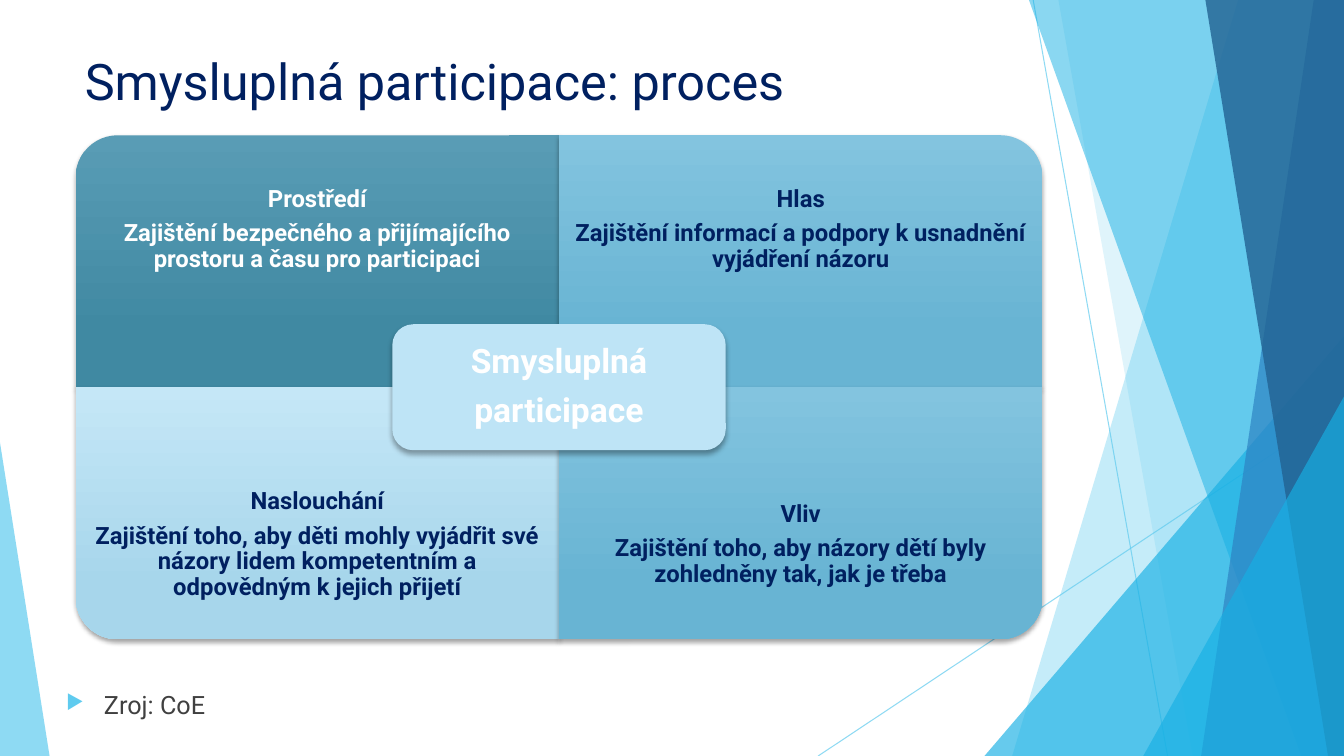
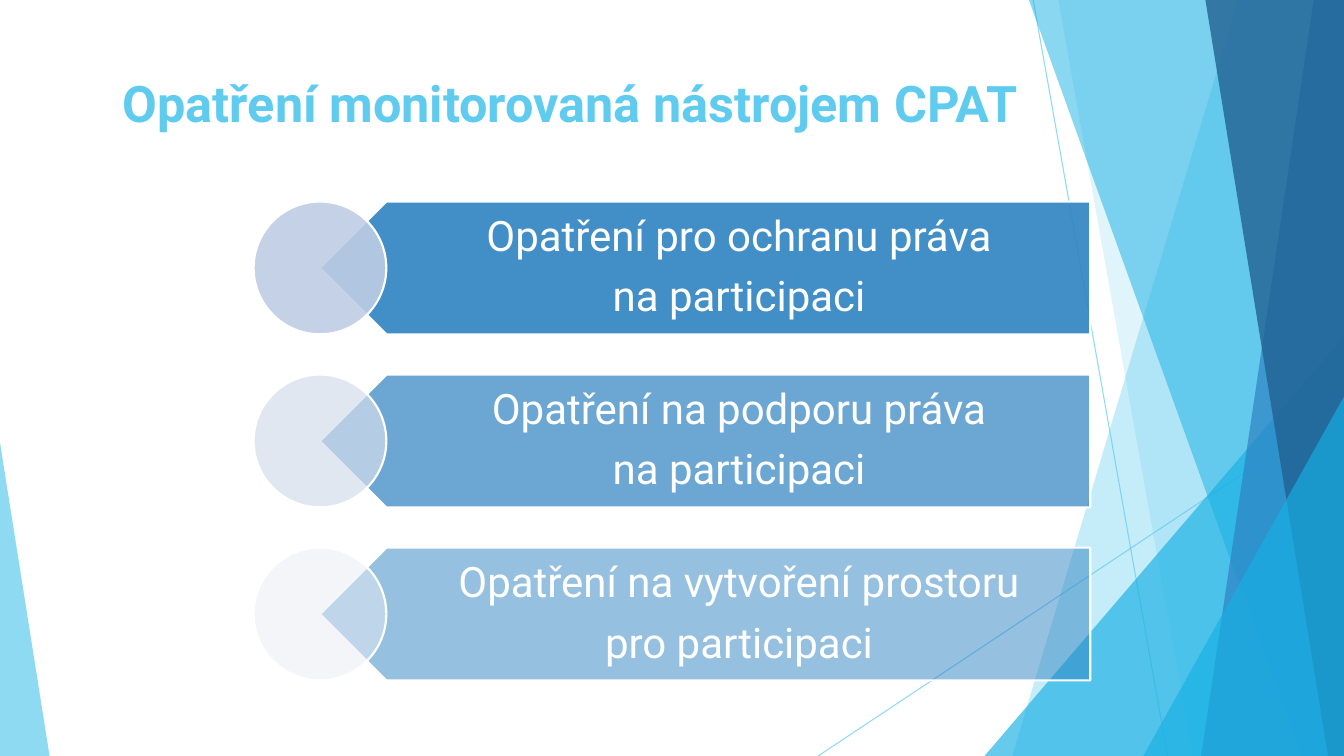
from dataclasses import dataclass

from lxml.etree import SubElement
from pptx import Presentation
from pptx.dml.color import RGBColor
from pptx.enum.shapes import MSO_CONNECTOR, MSO_SHAPE as SHAPE
from pptx.enum.text import MSO_ANCHOR as ANCHOR, MSO_AUTO_SIZE, PP_ALIGN as ALIGN
from pptx.oxml.ns import qn
from pptx.util import Emu, Inches, Pt

COLS, ROWS = 160, 90
UNIT = Inches(7.5) / ROWS
FONT = "Roboto"

WHITE = RGBColor(0xFF, 0xFF, 0xFF)
NAVY = RGBColor(0x00, 0x20, 0x60)
GREY = RGBColor(0x40, 0x40, 0x40)
SKY = RGBColor(0x5F, 0xCB, 0xEF)
AZURE = RGBColor(0x17, 0xB0, 0xE4)
BLUE = RGBColor(0x2E, 0x83, 0xC3)
DEEP = RGBColor(0x22, 0x62, 0x92)
PALE = RGBColor(0xBE, 0xE4, 0xF6)
TEAL_RAMP = RGBColor(0x59, 0x9C, 0xB5), RGBColor(0x40, 0x89, 0xA2)
AQUA_RAMP = RGBColor(0x83, 0xC4, 0xDF), RGBColor(0x68, 0xB4, 0xD3)
ICE_RAMP = RGBColor(0xC5, 0xE7, 0xF7), RGBColor(0xA7, 0xD6, 0xEB)


@dataclass(frozen=True)
class Box:
    """A place on the grid, in columns and rows."""
    col: float
    row: float
    cols: float
    rows: float

    def emu(self) -> tuple[Emu, ...]:
        return tuple(grid(n) for n in (self.col, self.row, self.cols, self.rows))


@dataclass(frozen=True)
class Ray:
    start: tuple[float, float]
    end: tuple[float, float]


@dataclass(frozen=True)
class Ribbon:
    """A full-height band from a slanted left edge to the right of the slide."""
    top_col: float
    bottom_col: float
    color: RGBColor
    alpha: int


@dataclass(frozen=True)
class Wedge:
    """A right triangle standing on the bottom of the slide."""
    col: float
    cols: float
    rows: float
    apex: float
    color: RGBColor
    alpha: int


@dataclass(frozen=True)
class Quadrant:
    col: int
    row: int
    turn: int
    ramp: tuple[RGBColor, RGBColor]
    color: RGBColor
    heading: str
    body: str


@dataclass(frozen=True)
class Measure:
    lines: tuple[str, str]
    dot: RGBColor
    alpha: int


RAYS = (
    Ray((123, 0), (139, ROWS)),
    Ray((COLS, 48.4), (97.4, ROWS)),
)
PANES = (
    Ribbon(147.4, 120.5, SKY, 36),
    Ribbon(126, 142, SKY, 20),
    Wedge(117.2, 42.8, 50, 1, AZURE, 66),
    Ribbon(122.5, 154.9, AZURE, 50),
    Ribbon(156.4, 143, BLUE, 70),
    Ribbon(143.5, 158.1, DEEP, 80),
    Wedge(136.1, 23.9, 42.8, 1, AZURE, 66),
    Wedge(0, 5.9, 37.3, 0, SKY, 70),
)
QUADRANTS = (
    Quadrant(0, 0, 270, TEAL_RAMP, WHITE, "Prostředí",
             "Zajištění bezpečného a přijímajícího prostoru a času pro participaci"),
    Quadrant(1, 0, 0, AQUA_RAMP, NAVY, "Hlas",
             "Zajištění informací a podpory k usnadnění vyjádření názoru"),
    Quadrant(0, 1, 180, ICE_RAMP, NAVY, "Naslouchání",
             "Zajištění toho, aby děti mohly vyjádřit své názory lidem "
             "kompetentním a odpovědným k jejich přijetí"),
    Quadrant(1, 1, 90, AQUA_RAMP, NAVY, "Vliv",
             "Zajištění toho, aby názory dětí byly zohledněny tak, jak je třeba"),
)
MEASURES = (
    Measure(("Opatření pro ochranu práva", "na participaci"),
            RGBColor(0xBE, 0xCD, 0xE4), 90),
    Measure(("Opatření na podporu práva", "na participaci"),
            RGBColor(0xD3, 0xDD, 0xEC), 70),
    Measure(("Opatření na vytvoření prostoru", "pro participaci"),
            RGBColor(0xE8, 0xED, 0xF5), 50),
)


def grid(n: float) -> Emu:
    return Emu(round(n * UNIT))


def set_alpha(holder, percent: int) -> None:
    """Make the solid fill inside a shape's properties or line see-through."""
    color = holder.find(qn("a:solidFill"))[0]
    SubElement(color, qn("a:alpha"), val=str(percent * 1000))


def paint(sp, color: RGBColor, alpha: int = 100, outline: RGBColor | None = None) -> None:
    sp.shadow.inherit = False
    sp.fill.solid()
    sp.fill.fore_color.rgb = color
    if alpha < 100:
        set_alpha(sp.element.spPr, alpha)
    if outline is None:
        sp.line.fill.background()
    else:
        sp.line.color.rgb = outline
        sp.line.width = Pt(1.5)


def paint_ramp(sp, ramp: tuple[RGBColor, RGBColor]) -> None:
    """Fill from top to bottom, whichever way the shape is turned."""
    sp.fill.gradient()
    sp.fill.gradient_angle = 270
    for stop, color, position in zip(sp.fill.gradient_stops, ramp, (0, 0.78)):
        stop.color.rgb = color
        stop.position = position
    sp.element.spPr.find(qn("a:gradFill")).set("rotWithShape", "0")
    sp.line.fill.background()


def drop_shadow(sp, blur: float, distance: float) -> None:
    sp.shadow.inherit = False
    effects = sp.element.spPr.find(qn("a:effectLst"))
    outer = SubElement(effects, qn("a:outerShdw"), blurRad=str(Pt(blur)),
                       dist=str(Pt(distance)), dir="5400000", rotWithShape="0")
    color = SubElement(outer, qn("a:srgbClr"), val="000000")
    SubElement(color, qn("a:alpha"), val="35000")


def write(sp, *lines: str, size: float, color: RGBColor, bold: bool = False,
          align: ALIGN = ALIGN.CENTER, anchor: ANCHOR = ANCHOR.MIDDLE,
          insets: tuple[float, ...] = (1.2, 0.6, 1.2, 0.6),
          spacing: float = 1, after: float = 0) -> None:
    """Write one paragraph per line; after is a share of the text size."""
    tf = sp.text_frame
    tf.word_wrap = True
    tf.auto_size = MSO_AUTO_SIZE.NONE
    tf.vertical_anchor = anchor
    tf.margin_left, tf.margin_top, tf.margin_right, tf.margin_bottom = map(grid, insets)
    for i, line in enumerate(lines):
        p = tf.paragraphs[0] if i == 0 else tf.add_paragraph()
        p.alignment = align
        p.line_spacing = spacing
        p.space_after = Pt(size * after)
        r = p.add_run()
        r.text = line
        r.font.name = FONT
        r.font.size = Pt(size)
        r.font.bold = bold
        r.font.color.rgb = color


def add_bullet(p) -> None:
    pPr = p._p.get_or_add_pPr()
    pPr.set("marL", str(grid(4.5)))
    pPr.set("indent", str(-grid(4.5)))
    color = SubElement(pPr, qn("a:buClr"))
    SubElement(color, qn("a:srgbClr"), val=str(SKY))
    SubElement(pPr, qn("a:buSzPct"), val="80000")
    SubElement(pPr, qn("a:buChar"), char="▶")


def draw_ray(slide, ray: Ray):
    sp = slide.shapes.add_connector(MSO_CONNECTOR.STRAIGHT,
                                    *map(grid, ray.start + ray.end))
    sp.line.color.rgb = SKY
    sp.line.width = Pt(0.75)
    spPr = sp.element.spPr
    set_alpha(spPr.find(qn("a:ln")), 70)
    SubElement(spPr, qn("a:effectLst"))
    return sp


def draw_pane(slide, pane: Ribbon | Wedge):
    if isinstance(pane, Ribbon):
        corners = ((COLS, 0), (COLS, ROWS), (pane.bottom_col, ROWS))
        builder = slide.shapes.build_freeform(grid(pane.top_col), 0)
        builder.add_line_segments([(grid(x), grid(y)) for x, y in corners])
        sp = builder.convert_to_shape()
    else:
        box = Box(pane.col, ROWS - pane.rows, pane.cols, pane.rows)
        sp = slide.shapes.add_shape(SHAPE.ISOSCELES_TRIANGLE, *box.emu())
        sp.adjustments[0] = pane.apex
    paint(sp, pane.color, pane.alpha)
    return sp


def move_backdrop_to_layout(slide) -> None:
    """Draw the backdrop and hand it to the layout that all slides share."""
    layout = slide.slide_layout
    for ph in list(layout.placeholders)[1:]:
        layout.shapes.element.remove(ph.element)
    drawn = [draw_ray(slide, ray) for ray in RAYS]
    drawn += [draw_pane(slide, pane) for pane in PANES]
    for sp in drawn:
        layout.shapes.element.append(sp.element)


def set_title(slide, text: str, box: Box, **style) -> None:
    sp = slide.shapes.title
    sp.left, sp.top, sp.width, sp.height = box.emu()
    write(sp, text, size=36, anchor=ANCHOR.TOP, **style)


def draw_quadrant(slide, quad: Quadrant) -> None:
    cols, rows = 57.55, 30
    left, top = 9 + quad.col * cols, 16.1 + quad.row * rows
    box = Box(left, top, cols, rows)
    if quad.turn % 180:
        shift = (cols - rows) / 2
        box = Box(left + shift, top - shift, rows, cols)
    sp = slide.shapes.add_shape(SHAPE.ROUND_1_RECTANGLE, *box.emu())
    sp.rotation = quad.turn
    paint_ramp(sp, quad.ramp)
    drop_shadow(sp, 3, 2)
    text_box = Box(left, top + quad.row * rows / 4, cols, rows * 3 / 4)
    write(slide.shapes.add_textbox(*text_box.emu()), quad.heading, quad.body,
          size=17, color=quad.color, bold=True, insets=(1.6,) * 4,
          spacing=0.9, after=0.37)


def draw_measure(slide, index: int, measure: Measure) -> None:
    side = 15.8
    row = 24 + index * 20.6
    sp = slide.shapes.add_shape(SHAPE.PENTAGON, *Box(38.1, row, 91.7, side).emu())
    sp.rotation = 180
    paint(sp, BLUE, measure.alpha, outline=WHITE)
    write(slide.shapes.add_textbox(*Box(42, row, 87.8, side).emu()), *measure.lines,
          size=30, color=WHITE, insets=(7, 1.4, 2.8, 1.4), spacing=0.9, after=0.37)
    dot = slide.shapes.add_shape(SHAPE.OVAL, *Box(38.1 - side / 2, row, side, side).emu())
    paint(dot, measure.dot, measure.alpha, outline=WHITE)


def build_process(slide) -> None:
    set_title(slide, "Smysluplná participace: proces", Box(8.9, 5.4, 112.8, 19.9),
              color=NAVY, align=ALIGN.LEFT)
    source = slide.shapes.add_textbox(*Box(6.7, 81.5, 112.8, 5).emu())
    write(source, "Zroj: CoE", size=18, color=GREY, align=ALIGN.LEFT, anchor=ANCHOR.TOP)
    add_bullet(source.text_frame.paragraphs[0])
    for quad in QUADRANTS:
        draw_quadrant(slide, quad)
    core = slide.shapes.add_shape(SHAPE.ROUNDED_RECTANGLE, *Box(46.7, 38.6, 39.7, 15).emu())
    paint(core, PALE)
    drop_shadow(core, 4, 3)
    write(core, "Smysluplná", "participace", size=24, color=WHITE, bold=True,
          spacing=0.9, after=0.37)


def build_measures(slide) -> None:
    set_title(slide, "Opatření monitorovaná nástrojem CPAT", Box(8.9, 8, 118, 17.3),
              color=SKY, bold=True)
    for index, measure in enumerate(MEASURES):
        draw_measure(slide, index, measure)


def main() -> None:
    prs = Presentation()
    prs.slide_width, prs.slide_height = grid(COLS), grid(ROWS)
    title_only = prs.slide_layouts[5]
    process, measures = (prs.slides.add_slide(title_only) for _ in range(2))
    move_backdrop_to_layout(process)
    build_process(process)
    build_measures(measures)
    prs.save("out.pptx")


if __name__ == "__main__":
    main()
